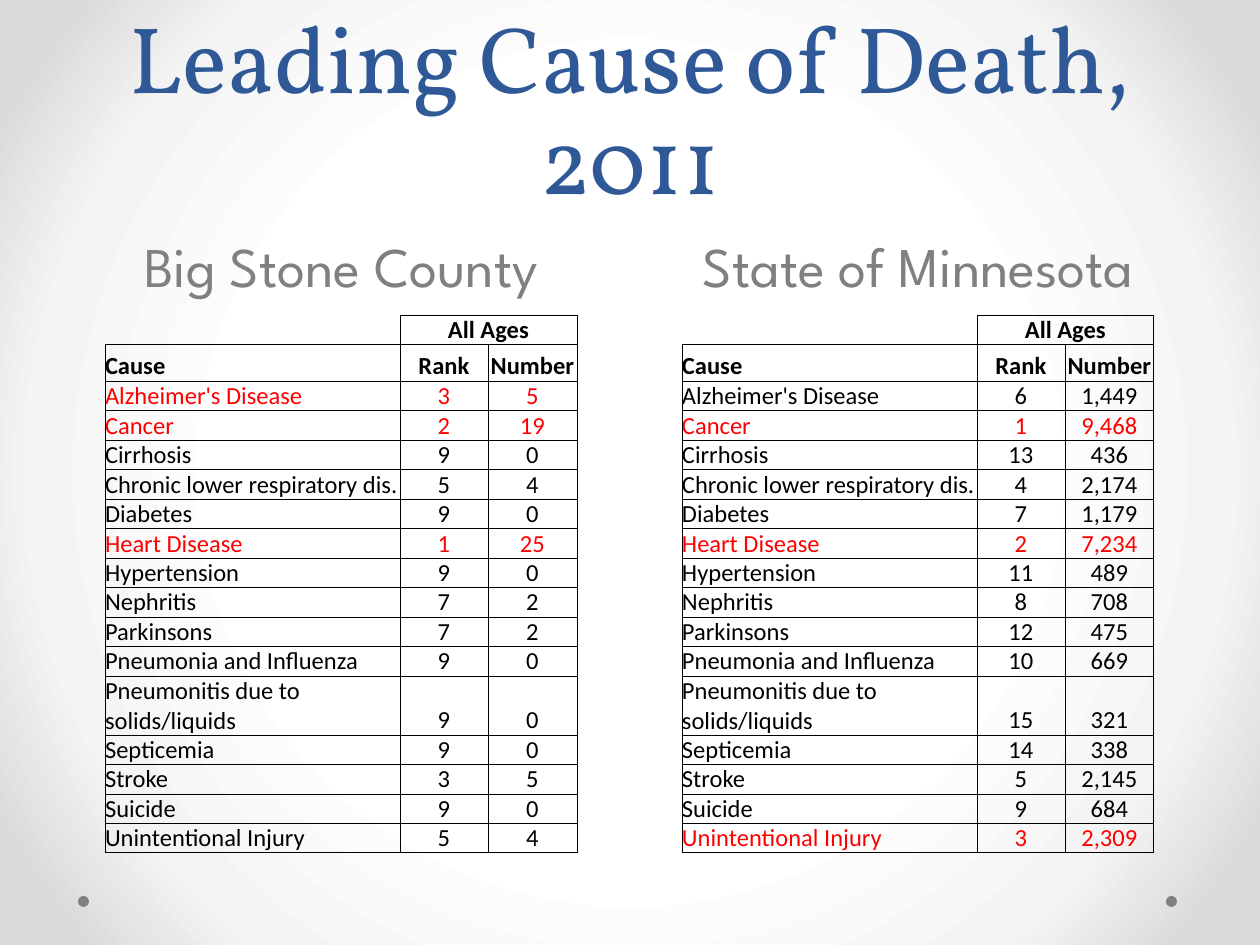
from lxml.etree import SubElement
from pptx import Presentation
from pptx.dml.color import RGBColor
from pptx.enum.shapes import MSO_SHAPE as Preset
from pptx.enum.text import MSO_ANCHOR as Anchor, PP_ALIGN as Align
from pptx.oxml import parse_xml
from pptx.oxml.ns import nsdecls, qn
from pptx.util import Emu, Pt

COLOURS = {"title": "2F5897", "grey": "808080", "text": "000000", "top": "FF0000", "line": "000000"}
BACKGROUND = [(50, "FFFFFF"), (76, "F4F4F4"), (92, "DADADA")]
TITLE_FORMAT = {"size": Pt(54), "name": "Vollkorn"}
HEADING_FORMAT = {"size": Pt(32), "name": "League Spartan"}
CELL_FORMAT = {"size": Pt(14), "name": "Calibri"}

TITLE = "Leading Cause of Death, 2011"
HEADERS = ["Cause", "Rank", "Number"]
CAUSES = [
    "Alzheimer's Disease", "Cancer", "Cirrhosis", "Chronic lower respiratory dis.",
    "Diabetes", "Heart Disease", "Hypertension", "Nephritis", "Parkinsons",
    "Pneumonia and Influenza", "Pneumonitis due to solids/liquids", "Septicemia",
    "Stroke", "Suicide", "Unintentional Injury",
]
REGIONS = [
    {
        "name": "Big Stone County", "heading_left": 63, "table_left": 105,
        "ranks": [3, 2, 9, 5, 9, 1, 9, 7, 7, 9, 9, 9, 3, 9, 5],
        "numbers": [5, 19, 0, 4, 0, 25, 0, 2, 2, 0, 0, 0, 5, 0, 4],
        "top": {"Alzheimer's Disease", "Cancer", "Heart Disease"},
    },
    {
        "name": "State of Minnesota", "heading_left": 640, "table_left": 682,
        "ranks": [6, 1, 13, 4, 7, 2, 11, 8, 12, 10, 15, 14, 5, 9, 3],
        "numbers": [1449, 9468, 436, 2174, 1179, 7234, 489, 708, 475, 669, 321, 338, 2145, 684, 2309],
        "top": {"Cancer", "Heart Disease", "Unintentional Injury"},
    },
]
COLUMN_WIDTHS = [295, 88, 89]
HEADER_HEIGHTS = [28, 37]
LINE_HEIGHT = 28
TABLE_TOP = 315
DOT_LEFTS = [1166, 78]


def px(count):
    return Emu(round(count * 914400 / 126))


def write(para, text, formats, colour, align=Align.CENTER, bold=False):
    para.alignment = align
    span = para.add_run()
    span.text = text
    for name, value in formats.items():
        setattr(span.font, name, value)
    span.font.bold = bold
    span.font.color.rgb = RGBColor.from_string(COLOURS[colour])


def add_label(page, place, text, formats, colour):
    box = page.shapes.add_textbox(*map(px, place))
    box.text_frame.word_wrap = True
    box.text_frame.vertical_anchor = Anchor.BOTTOM
    para = box.text_frame.paragraphs[0]
    write(para, text, formats, colour)
    return para


def set_background(page):
    stops = "".join(
        f'<a:gs pos="{at * 1000}"><a:srgbClr val="{colour}"/></a:gs>' for at, colour in BACKGROUND
    )
    page.element.cSld.insert(0, parse_xml(
        f'<p:bg {nsdecls("p", "a")}><p:bgPr><a:gradFill rotWithShape="1"><a:gsLst>{stops}</a:gsLst>'
        '<a:path path="circle"><a:fillToRect l="50000" t="50000" r="50000" b="50000"/></a:path>'
        '</a:gradFill><a:effectLst/></p:bgPr></p:bg>'
    ))


def set_borders(cell, sides):
    """Draw the named sides of the cell and clear the others."""
    properties = cell._tc.get_or_add_tcPr()
    for side in "LRTB":
        line = SubElement(properties, qn(f"a:ln{side}"), w=str(Pt(0.5)))
        if side in sides:
            fill = SubElement(line, qn("a:solidFill"))
            SubElement(fill, qn("a:srgbClr"), val=COLOURS["line"])
        else:
            SubElement(line, qn("a:noFill"))


def add_region_table(page, region):
    rows = [["", "All Ages", ""], HEADERS] + [
        [cause, str(rank), f"{number:,}"]
        for cause, rank, number in zip(CAUSES, region["ranks"], region["numbers"])
    ]
    heights = HEADER_HEIGHTS + [
        LINE_HEIGHT * (2 if cause.startswith("Pneumonitis") else 1) for cause in CAUSES
    ]
    place = region["table_left"], TABLE_TOP, sum(COLUMN_WIDTHS), sum(heights)
    table = page.shapes.add_table(len(rows), len(HEADERS), *map(px, place)).table
    table.first_row = table.horz_banding = False
    for column, width in zip(table.columns, COLUMN_WIDTHS):
        column.width = px(width)
    for row, height in zip(table.rows, heights):
        row.height = px(height)

    for r, values in enumerate(rows):
        colour = "top" if values[0] in region["top"] else "text"
        for c, value in enumerate(values):
            cell = table.cell(r, c)
            set_borders(cell, "RB" if r == c == 0 else "LRTB")
            cell.fill.background()
            cell.margin_left = cell.margin_right = cell.margin_top = cell.margin_bottom = 0
            cell.vertical_anchor = Anchor.BOTTOM
            para = cell.text_frame.paragraphs[0]
            if value:
                align = Align.CENTER if c else Align.LEFT
                write(para, value, CELL_FORMAT, colour, align, r < len(HEADER_HEIGHTS))
            else:
                SubElement(para._p, qn("a:endParaRPr"), sz="1400")
    table.cell(0, 1).merge(table.cell(0, 2))


def main():
    deck = Presentation()
    deck.slide_width, deck.slide_height = px(1260), px(945)
    page = deck.slides.add_slide(deck.slide_layouts[6])
    set_background(page)

    for left in DOT_LEFTS:
        dot = page.shapes.add_shape(Preset.OVAL, *map(px, (left, 896, 11, 11)))
        dot.shadow.inherit = False
        dot.fill.solid()
        dot.fill.fore_color.rgb = RGBColor.from_string(COLOURS["grey"])
        dot.line.fill.background()

    title = add_label(page, (63, 0, 1134, 220), TITLE, TITLE_FORMAT, "title")
    title.line_spacing = Pt(58)
    for region in REGIONS:
        place = region["heading_left"], 220, 557, 85
        add_label(page, place, region["name"], HEADING_FORMAT, "grey")
    for region in REGIONS:
        add_region_table(page, region)

    deck.save("out.pptx")


if __name__ == "__main__":
    main()
